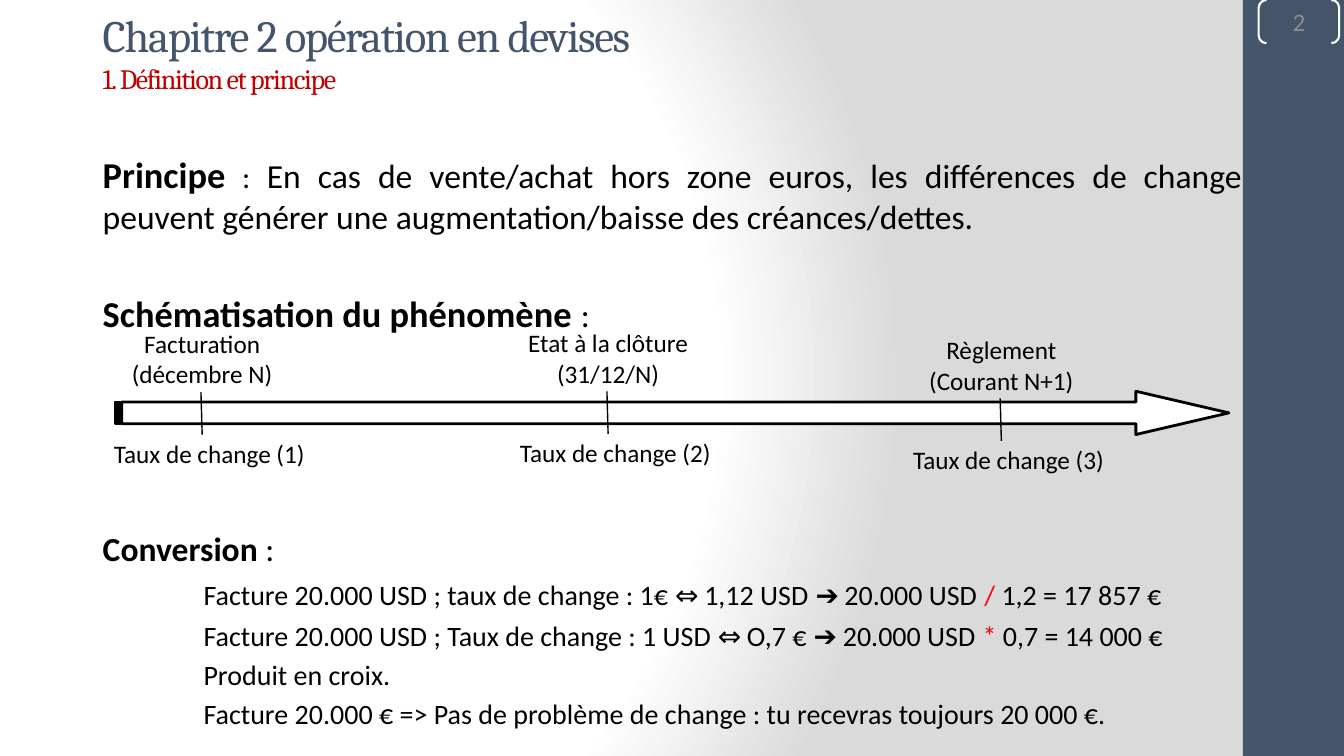
from pptx import Presentation
from pptx.dml.color import RGBColor
from pptx.enum.shapes import MSO_CONNECTOR as Connector, MSO_SHAPE as Preset
from pptx.enum.text import MSO_ANCHOR as Anchor, PP_ALIGN as Align
from pptx.oxml import parse_xml
from pptx.oxml.ns import nsdecls, qn
from pptx.util import Cm, Pt

WIDTH, HEIGHT = 33.87, 19.05
SLATE, BLACK, WHITE, RED = "44546A", "000000", "FFFFFF", "FF0000"

MILESTONES = [
    (2.34, 8.15, ["Facturation (décembre N)"]),
    (12.57, 8.13, ["Etat à la clôture (31/12/N)"]),
    (22.48, 8.31, ["Règlement", "(Courant N+1)"]),
]
BOLD = {"size": 26, "bold": True}
MARK = {"size": 20, "color": RED}
SMALL = {"size": 20}
BODY = [
    (0, 0, [("Principe", BOLD), (" : ", {"size": 22}),
            ("En cas de vente/achat hors zone euros, les différences de change peuvent "
             "générer une augmentation/baisse des créances/dettes.", {"size": 24})]),
    (39, 0, [("Schématisation du phénomène ", BOLD), (":", {"size": 24})]),
    (138, 0, [("Conversion", {"size": 24, "bold": True}), (" : ", {"size": 24})]),
    (7, 2.54, [("Facture 20.000 USD ; taux de change : 1€ ⇔ 1,12 USD ➔ 20.000 USD ", SMALL),
               ("/ ", MARK), ("1,2 = 17 857 €", SMALL)]),
    (5, 2.54, [("Facture 20.000 USD ; Taux de change : 1 USD ⇔ O,7 € ➔ 20.000 USD ", SMALL),
               ("*", MARK), (" 0,7 = 14 000 €", SMALL)]),
    (4, 2.54, [("Produit en croix.", SMALL)]),
    (4, 2.54, [("Facture 20.000 € => Pas de problème de change : "
                "tu recevras toujours 20 000 €.", SMALL)]),
]


def rgb(value):
    """Turn a hex string into a colour."""
    return RGBColor.from_string(value)


def write(paragraph, text, size=18, font="Calibri", color=BLACK, bold=False, spacing=0):
    """Add a formatted run to a paragraph."""
    run = paragraph.add_run()
    run.text = text
    run.font.size, run.font.name, run.font.bold = Pt(size), font, bold
    run.font.color.rgb = rgb(color)
    if spacing:
        run.font._element.set("spc", str(int(spacing * 100)))


def add_text_frame(slide, left, top, width, height, count):
    """Add a wrapping text box and return its frame and paragraphs."""
    frame = slide.shapes.add_textbox(Cm(left), Cm(top), Cm(width), Cm(height)).text_frame
    frame.word_wrap = True
    for _ in range(count - 1):
        frame.add_paragraph()
    return frame, frame.paragraphs


def add_preset(slide, preset, left, top, width, height, fill=None, line=None, weight=1):
    """Add a preset shape without shadow."""
    shape = slide.shapes.add_shape(preset, Cm(left), Cm(top), Cm(width), Cm(height))
    shape.shadow.inherit = False
    if fill:
        shape.fill.solid()
        shape.fill.fore_color.rgb = rgb(fill)
    else:
        shape.fill.background()
    if line:
        shape.line.color.rgb = rgb(line)
        shape.line.width = Pt(weight)
    else:
        shape.line.fill.background()
    return shape


def set_background(slide):
    """Give the slide a radial white to grey background."""
    stops = "".join(
        f'<a:gs pos="{position}"><a:srgbClr val="{color}"/></a:gs>'
        for position, color in [(0, WHITE), (75000, WHITE), (100000, "DADADA")])
    background = parse_xml(
        f'<p:bg {nsdecls("p", "a")}><p:bgPr><a:gradFill rotWithShape="1">'
        f'<a:gsLst>{stops}</a:gsLst><a:path path="circle">'
        '<a:fillToRect l="20000" t="50000" r="100000" b="50000"/></a:path>'
        '</a:gradFill><a:effectLst/></p:bgPr></p:bg>')
    slide._element.find(qn("p:cSld")).insert(0, background)


def add_sidebar(slide, left, top, width, height):
    """Draw the side band with the bracketed page number."""
    add_preset(slide, Preset.RECTANGLE, left, top, width, height, fill=SLATE)
    bracket = add_preset(slide, Preset.DOUBLE_BRACKET, left + 0.4, top, 2.03, 1.09,
                         line=WHITE, weight=1.5)
    bracket.adjustments[0] = 0.18
    frame = bracket.text_frame
    frame.margin_left = frame.margin_right = frame.margin_top = frame.margin_bottom = 0
    frame.vertical_anchor = Anchor.MIDDLE
    paragraph = frame.paragraphs[0]
    paragraph.alignment = Align.CENTER
    write(paragraph, "2", color="8C8C8C")


def add_title(slide, left, top, width, height):
    """Write the chapter title and its section."""
    frame, (chapter, section) = add_text_frame(slide, left, top, width, height, 2)
    frame.margin_top = 0
    write(chapter, "Chapitre 2 opération en devises", size=32, font="Cambria",
          color=SLATE, spacing=-1)
    write(section, "1. Définition et principe", size=20, font="Cambria",
          color="C00000", spacing=-1)


def add_body(slide, left, top, width, height):
    """Write the principle, the diagram heading and the conversions."""
    _, paragraphs = add_text_frame(slide, left, top, width, height, len(BODY))
    for paragraph, (before, indent, runs) in zip(paragraphs, BODY):
        paragraph.alignment = Align.JUSTIFY
        paragraph.space_before = Pt(before)
        paragraph._p.get_or_add_pPr().set("marL", str(Cm(indent)))
        for text, style in runs:
            write(paragraph, text, **style)


def add_label(slide, left, top, width, height, lines):
    """Write centred lines of a milestone."""
    _, paragraphs = add_text_frame(slide, left, top, width, height, len(lines))
    for paragraph, text in zip(paragraphs, lines):
        paragraph.alignment = Align.CENTER
        write(paragraph, text)


def add_milestone(slide, left, top, width, lines, number):
    """Draw a tick with its event above and its rate below."""
    middle = left + width / 2
    tick = slide.shapes.add_connector(Connector.STRAIGHT, Cm(middle - 0.03), Cm(top + 1.73),
                                      Cm(middle), Cm(top + 2.8))
    tick.line.color.rgb = rgb(BLACK)
    tick.line.width = Pt(1)
    tick._element.spPr.append(parse_xml(f'<a:effectLst {nsdecls("a")}/>'))
    add_label(slide, left, top, width, 1.8, lines)
    add_label(slide, left + 0.18, top + 2.77, width, 1.02, [f"Taux de change ({number})"])


def add_timeline(slide, left, top, width, height):
    """Draw the time arrow and its milestones."""
    arrow = add_preset(slide, Preset.STRIPED_RIGHT_ARROW, left, top, width, height,
                       fill=WHITE, line=BLACK, weight=2)
    arrow.adjustments[0], arrow.adjustments[1] = 0.5, 2.15
    for number, (label_left, label_top, lines) in enumerate(MILESTONES, 1):
        add_milestone(slide, label_left, label_top, 5.51, lines, number)


def main():
    """Build and save the slide."""
    presentation = Presentation()
    presentation.slide_width, presentation.slide_height = Cm(WIDTH), Cm(HEIGHT)
    slide = presentation.slides.add_slide(presentation.slide_layouts[6])
    set_background(slide)
    add_sidebar(slide, 31.32, 0, 2.55, HEIGHT)
    add_body(slide, 2.34, 3.71, 29.21, 14.88)
    add_timeline(slide, 2.9, 9.86, 28.07, 1.09)
    add_title(slide, 2.34, 0.2, 25.4, 2.5)
    presentation.save("out.pptx")


if __name__ == "__main__":
    main()
